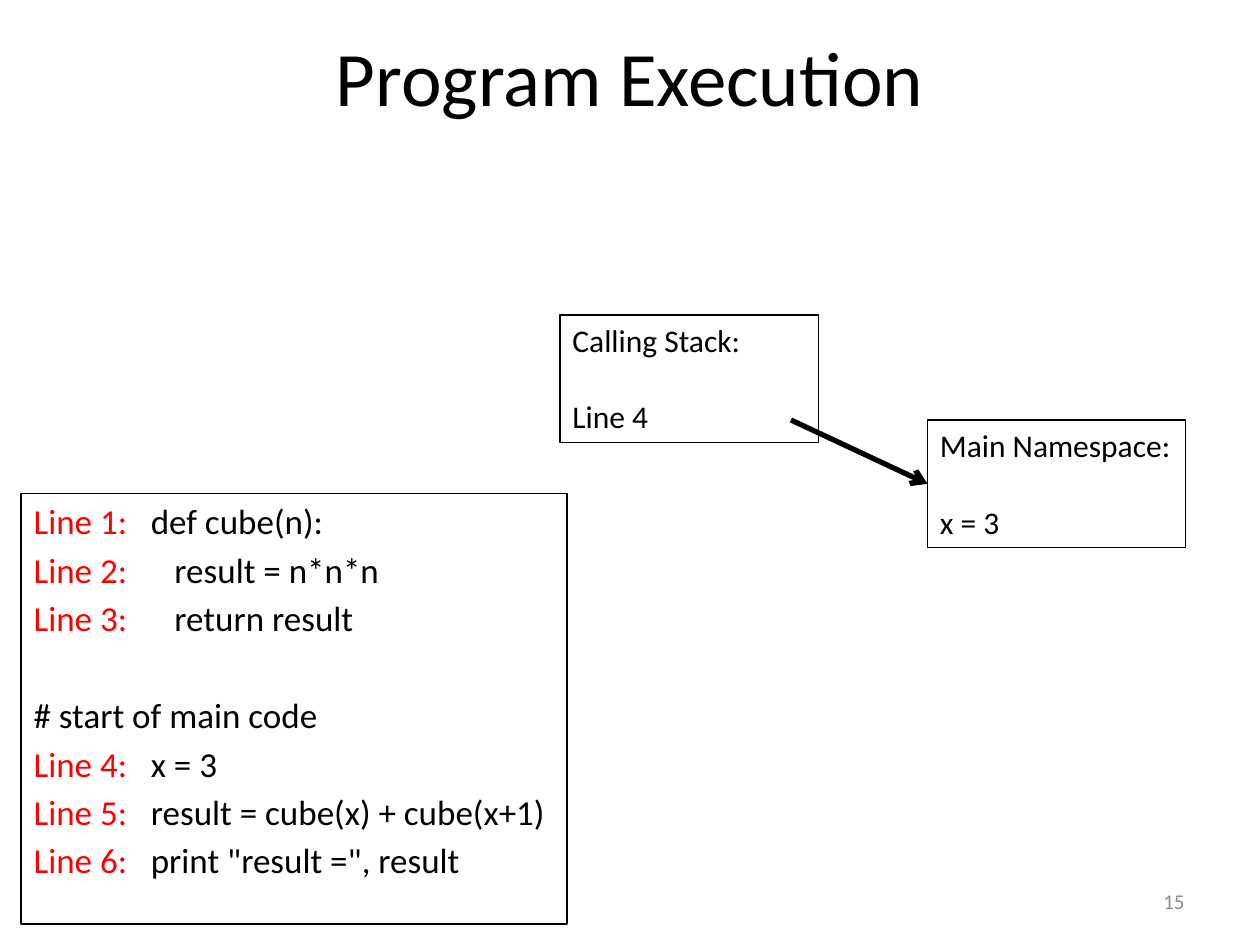
from lxml import etree
from pptx import Presentation
from pptx.dml.color import RGBColor
from pptx.enum import shapes, text
from pptx.oxml import ns
from pptx.util import Pt

COLORS = {"ink": "000000", "label": "FF0000", "number": "8C8C8C", "paper": "FFFFFF"}
FONT = "Calibri"
CODE_COLUMN, NESTED_COLUMN = 67, 80.5
CODE_SPACING, CODE_LINE = 3.6, 28
STACK_LINE = 22

# (label, code, column where the code starts, extra space before)
CODE = [
    ("Line 1:", "def cube(n):", CODE_COLUMN, 0),
    ("Line 2:", "result = n*n*n", NESTED_COLUMN, 0),
    ("Line 3:", "return result", NESTED_COLUMN, 0),
    ("", "# start of main code", CODE_COLUMN, CODE_LINE),
    ("Line 4:", "x = 3", CODE_COLUMN, 0),
    ("Line 5:", "result = cube(x) + cube(x+1)", CODE_COLUMN, 0),
    ("Line 6:", 'print "result =", result', CODE_COLUMN, 0),
]


def rgb(name):
    return RGBColor.from_string(COLORS[name])


def style(paragraph, size, color="ink", align=text.PP_ALIGN.LEFT):
    paragraph.alignment = align
    font = paragraph.font
    font.name, font.size = FONT, Pt(size)
    font.color.rgb = rgb(color)


def place(shape, left, top, width, height):
    shape.left, shape.top = Pt(left), Pt(top)
    shape.width, shape.height = Pt(width), Pt(height)


def outline(shape):
    shape.line.color.rgb = rgb("ink")
    shape.line.width = Pt(0.75)


def add_title(slide, wording, *box):
    title = slide.shapes.title
    place(title, *box)
    title.text_frame.text = wording
    title.text_frame.vertical_anchor = text.MSO_ANCHOR.MIDDLE
    style(title.text_frame.paragraphs[0], 44, align=text.PP_ALIGN.CENTER)


def add_listing(slide, *box):
    """Code lines with red labels; a hanging indent sets the code column."""
    listing = slide.placeholders[1]
    place(listing, *box)
    outline(listing)
    frame = listing.text_frame
    frame.auto_size = text.MSO_AUTO_SIZE.NONE
    for index, (label, code, column, gap) in enumerate(CODE):
        line = frame.paragraphs[0] if index == 0 else frame.add_paragraph()
        style(line, 20)
        line.space_before = Pt(CODE_SPACING + gap)
        properties = line._p.get_or_add_pPr()
        properties.set("marL", str(Pt(column)))
        properties.set("indent", str(-Pt(column)))
        bullet = etree.Element(ns.qn("a:buNone"))
        properties.find(ns.qn("a:spcBef")).addnext(bullet)
        if label:
            run = line.add_run()
            run.text = label + "\t"
            run.font.color.rgb = rgb("label")
        line.add_run().text = code


def add_memory_box(slide, heading, entry, left, top, width=147.6, height=73):
    memory = slide.shapes.add_shape(
        shapes.MSO_SHAPE.RECTANGLE, Pt(left), Pt(top), Pt(width), Pt(height))
    memory.shadow.inherit = False
    memory.fill.background()
    outline(memory)
    frame = memory.text_frame
    frame.word_wrap = True
    frame.auto_size = text.MSO_AUTO_SIZE.SHAPE_TO_FIT_TEXT
    frame.vertical_anchor = text.MSO_ANCHOR.TOP
    frame.text = f"{heading}\n{entry}"
    for paragraph in frame.paragraphs:
        style(paragraph, 18)
    frame.paragraphs[1].space_before = Pt(STACK_LINE)
    return memory


def add_reference_arrow(slide, left, top, target):
    """Arrow from a point to the middle of the target's left side."""
    arrow = slide.shapes.add_connector(
        shapes.MSO_CONNECTOR.STRAIGHT, Pt(left), Pt(top),
        target.left, target.top + target.height // 2)
    arrow.end_connect(target, 1)
    arrow.line.color.rgb = rgb("ink")
    arrow.line.width = Pt(3)
    etree.SubElement(arrow.line._get_or_add_ln(), ns.qn("a:tailEnd"), type="arrow")
    etree.SubElement(arrow._element.spPr, ns.qn("a:effectLst"))


def add_page_number(slide, number, *box):
    frame = slide.shapes.add_textbox(*map(Pt, box)).text_frame
    frame.word_wrap = True
    frame.vertical_anchor = text.MSO_ANCHOR.MIDDLE
    frame.text = number
    style(frame.paragraphs[0], 12, "number", text.PP_ALIGN.RIGHT)


def main():
    deck = Presentation()
    deck.slide_width, deck.slide_height = Pt(720), Pt(540)
    slide = deck.slides.add_slide(deck.slide_layouts[1])
    slide.background.fill.solid()
    slide.background.fill.fore_color.rgb = rgb("paper")

    add_title(slide, "Program Execution", 36, 12, 648, 63)
    add_page_number(slide, "15", 516, 500.5, 168, 28.75)
    namespace = add_memory_box(slide, "Main Namespace:", "x = 3", 530, 240)
    add_memory_box(slide, "Calling Stack:", "Line 4", 320, 180)
    add_reference_arrow(slide, 452, 240, namespace)
    add_listing(slide, 12, 282, 312, 246)
    deck.save("out.pptx")


if __name__ == "__main__":
    main()
